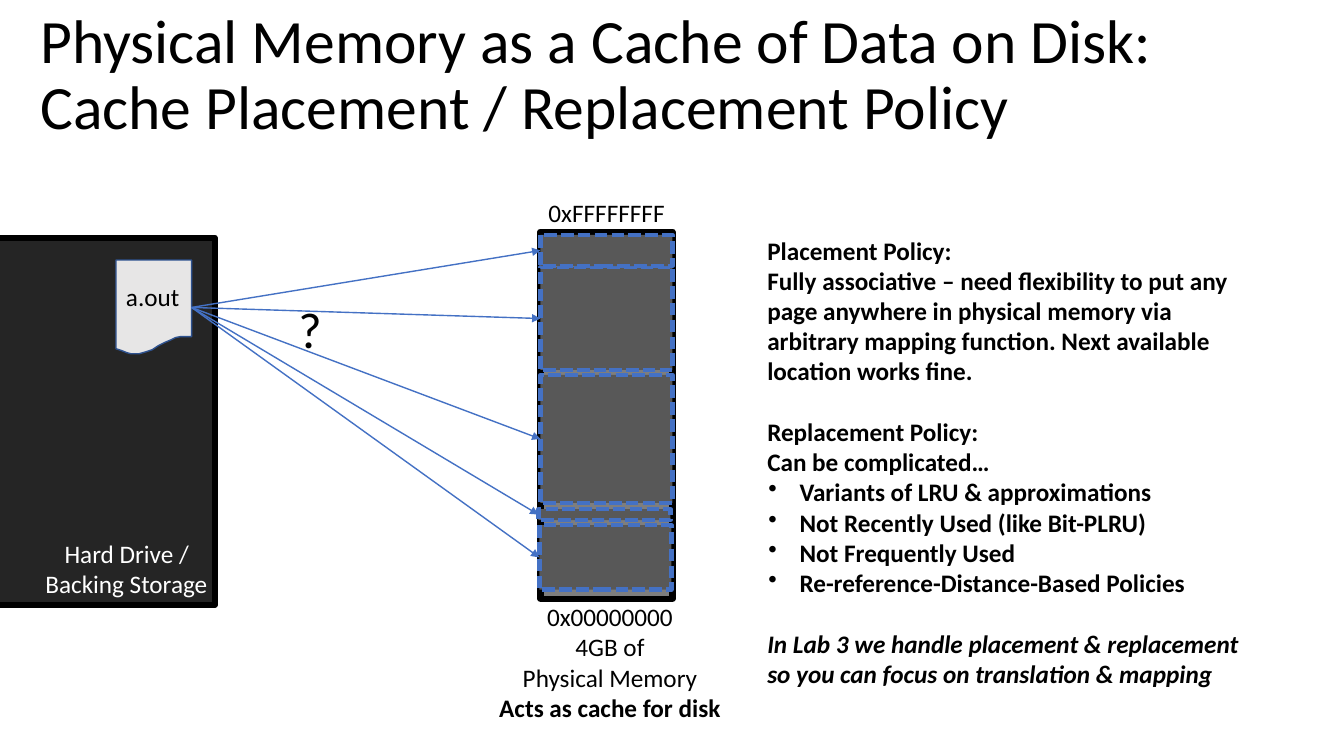
import pptx
import pptx.dml.color
import pptx.enum.dml
import pptx.enum.shapes
import pptx.enum.text
import pptx.oxml.ns
import pptx.util
from lxml import etree

Inches = pptx.util.Inches
Pt = pptx.util.Pt

BLACK, WHITE, BLUE = "000000", "FFFFFF", "4471C4"
FONT = "Calibri"

TITLE = ("Physical Memory as a Cache of Data on Disk: "
         "Cache Placement / Replacement Policy")

# left, top, width, height
MEMORY = (5.36, 2.3, 1.31, 3.64)
DRIVE = (0, 2.36, 2.13, 3.64)

# left, top, height of each page block, drawn in this order
PAGES = [
    (5.34, 5.05, 0.11),
    (5.36, 2.65, 1.02),
    (5.36, 2.33, 0.31),
    (5.36, 3.72, 1.27),
    (5.35, 5.21, 0.64),
]

FILE_OUTLINE = [
    (1.15, 2.58), (1.9, 2.58), (1.9, 3.34), (1.84, 3.34), (1.79, 3.34),
    (1.74, 3.35), (1.7, 3.37), (1.63, 3.4), (1.57, 3.43), (1.51, 3.47),
    (1.45, 3.49), (1.38, 3.51), (1.34, 3.51), (1.3, 3.51), (1.26, 3.5),
    (1.21, 3.48), (1.15, 3.46),
]
ARROW_START = (1.9, 3.05)

# box, paragraphs, format
LABELS = [
    ((5.43, 1.95, 1.24, 0.33), ["0xFFFFFFFF"], {}),
    ((5.41, 5.96, 1.28, 0.62), ["0x00000000", "4GB of"],
     {"center": True, "pitches": (21.5, 21.5)}),
    ((4.91, 6.62, 2.28, 0.58), ["Physical Memory", "Acts as cache for disk"],
     {"center": True, "pitches": (18.1, None), "before": 0, "inset": 0,
      "bold": (False, True)}),
    ((1.24, 2.78, 0.6, 0.33), ["a.out"], {}),
    ((0.44, 5.33, 1.66, 0.63), ["Hard Drive / Backing Storage"],
     {"color": WHITE, "indent": 0.19}),
    ((2.95, 2.95, 0.3, 0.63), ["?"], {"size": 36}),
]

POLICY_LEFT, POLICY_WIDTH = 7.6, 4.75
# top, height, paragraphs, format
POLICIES = [
    (2.32, 1.53,
     ["Placement Policy:",
      "Fully associative – need flexibility to put any page anywhere in "
      "physical memory via arbitrary mapping function. Next available "
      "location works fine."], {}),
    (4.12, 0.63, ["Replacement Policy:", "Can be complicated…"], {}),
    (4.72, 1.23,
     ["Variants of LRU & approximations",
      "Not Recently Used (like Bit-PLRU)",
      "Not Frequently Used",
      "Re-reference-Distance-Based Policies"],
     {"bullet": "•", "margin": 0.33, "indent": -0.31}),
    (6.22, 0.33, ["In Lab 3 we handle placement & replacement"],
     {"italic": True}),
    (6.58, 0.28, ["so you can focus on translation & mapping"],
     {"italic": True, "pitches": (18.1,), "before": 0, "inset": 0}),
]


def rgb(code):
    return pptx.dml.color.RGBColor.from_string(code)


def add_text(slide, box, lines, *, size=18, color=BLACK, bold=False,
             italic=False, center=False, pitches=(), before=1, inset=0.01,
             margin=0.01, indent=0, bullet=None):
    """Bold is one flag or one per line; pitches are exact line heights."""
    frame = slide.shapes.add_textbox(*map(Inches, box)).text_frame
    frame.word_wrap = True
    frame.margin_left = frame.margin_right = frame.margin_bottom = 0
    frame.margin_top = Inches(inset)
    for index, line in enumerate(lines):
        para = frame.paragraphs[0] if index == 0 else frame.add_paragraph()
        para.space_before = Pt(before if index == 0 else 0)
        if index < len(pitches) and pitches[index]:
            para.line_spacing = Pt(pitches[index])
        if center:
            para.alignment = pptx.enum.text.PP_ALIGN.CENTER
        else:
            properties = para._p.get_or_add_pPr()
            properties.set("marL", str(Inches(margin)))
            properties.set("indent", str(Inches(indent)))
            if bullet:
                mark = etree.SubElement(properties, pptx.oxml.ns.qn("a:buChar"))
                mark.set("char", bullet)
        span = para.add_run()
        span.text = line
        span.font.name = FONT
        span.font.size = Pt(size)
        span.font.bold = bold[index] if isinstance(bold, tuple) else bold
        span.font.italic = italic
        span.font.color.rgb = rgb(color)


def paint(shape, fill, line, width):
    shape.shadow.inherit = False
    shape.fill.solid()
    shape.fill.fore_color.rgb = rgb(fill)
    shape.line.color.rgb = rgb(line)
    shape.line.width = Pt(width)


def add_block(slide, box, *style):
    kind = pptx.enum.shapes.MSO_SHAPE.RECTANGLE
    block = slide.shapes.add_shape(kind, *map(Inches, box))
    paint(block, *style)
    return block


def add_outline(slide, points, close, *style):
    corners = [(Inches(x), Inches(y)) for x, y in points]
    builder = slide.shapes.build_freeform(*corners[0])
    builder.add_line_segments(corners[1:], close=close)
    paint(builder.convert_to_shape(), *style)


def add_arrow(slide, start, end):
    arrow = slide.shapes.add_connector(
        pptx.enum.shapes.MSO_CONNECTOR.STRAIGHT, *map(Inches, start + end))
    arrow.line.color.rgb = rgb(BLUE)
    arrow.line.width = Pt(1)
    qn = pptx.oxml.ns.qn
    etree.SubElement(arrow.line._get_or_add_ln(), qn("a:tailEnd"), type="triangle")
    etree.SubElement(arrow._element.spPr, qn("a:effectLst"))


def main():
    deck = pptx.Presentation()
    deck.slide_width, deck.slide_height = Inches(13.33), Inches(7.5)
    slide = deck.slides.add_slide(deck.slide_layouts[6])

    add_block(slide, MEMORY, "7E7E7E", BLACK, 4.5)
    left, top, width, height = DRIVE
    right, bottom = left + width, top + height
    add_outline(slide, [(left, bottom), (right, bottom), (right, top), (left, top)],
                False, "252525", BLACK, 4.5)
    add_outline(slide, FILE_OUTLINE, True, "E7E6E6", "2E528F", 1)

    for left, top, height in PAGES:
        page = add_block(slide, (left, top, MEMORY[2], height), "585858", BLUE, 3)
        page.line.dash_style = pptx.enum.dml.MSO_LINE.SQUARE_DOT
    for left, top, height in PAGES:
        add_arrow(slide, ARROW_START, (left, top + height / 2))

    add_text(slide, (0.21, -0.01, 12.07, 1.42), [TITLE], size=44,
             margin=0.19, pitches=(47.5,), before=7, inset=0.1)
    for box, lines, style in LABELS:
        add_text(slide, box, lines, **style)
    for top, height, lines, style in POLICIES:
        add_text(slide, (POLICY_LEFT, top, POLICY_WIDTH, height), lines,
                 bold=True, **style)

    deck.save("out.pptx")


if __name__ == "__main__":
    main()
